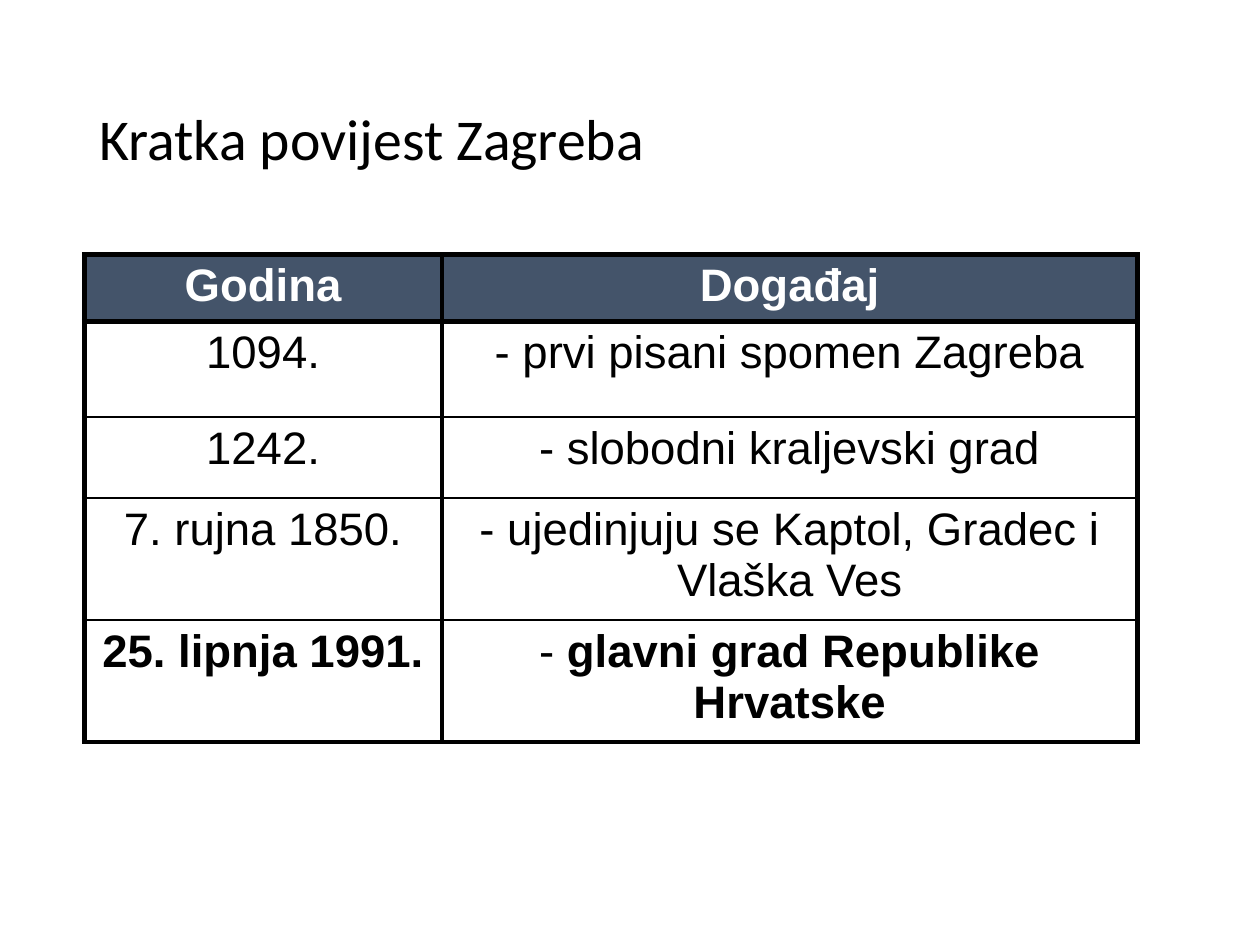
"""Build a slide with a short history of Zagreb as a two-column table."""
from dataclasses import dataclass

from lxml import etree
from pptx import Presentation
from pptx.dml.color import RGBColor
from pptx.enum.text import MSO_ANCHOR, PP_ALIGN
from pptx.oxml.ns import qn
from pptx.util import Cm, Pt

LEFT, CENTER = PP_ALIGN.LEFT, PP_ALIGN.CENTER
TOP, MIDDLE = MSO_ANCHOR.TOP, MSO_ANCHOR.MIDDLE
COLORS = {"ink": "000000", "header": "44546A", "header_text": "FFFFFF"}
COL_WIDTHS = (7.21, 14.02)
THICK, THIN = 3, 1


@dataclass
class Row:
    year: str
    event: str
    height: float
    bold: bool = False
    prefix: str = ""


ROWS = [
    Row("Godina", "Događaj", 1.35, bold=True),
    Row("1094.", "- prvi pisani spomen Zagreba", 1.93),
    Row("1242.", "- slobodni kraljevski grad", 1.63),
    Row("7. rujna 1850.", "- ujedinjuju se Kaptol, Gradec i Vlaška Ves", 2.46),
    Row("25. lipnja 1991.", "glavni grad Republike Hrvatske", 2.46, bold=True, prefix="- "),
]


def write(tf, text: str, *, prefix: str = "", font: str = "Arial", size: float = 26,
          color: str = "ink", bold: bool = False, align=CENTER):
    """Write one paragraph, with an optional regular-weight prefix, and return it."""
    p = tf.paragraphs[0]
    p.alignment = align
    for part, weight in ((prefix, False), (text, bold)):
        if part:
            r = p.add_run()
            r.text = part
            r.font.name, r.font.size, r.font.bold = font, Pt(size), weight
            r.font.color.rgb = RGBColor.from_string(COLORS[color])
    return p


def set_borders(cell, top: float, bottom: float) -> None:
    """Give a cell thick sides and the chosen top and bottom lines."""
    tcPr = cell._tc.get_or_add_tcPr()
    widths = {"a:lnL": THICK, "a:lnR": THICK, "a:lnT": top, "a:lnB": bottom}
    for i, (tag, width) in enumerate(widths.items()):
        ln = etree.Element(qn(tag), w=str(Pt(width)))
        fill = etree.SubElement(ln, qn("a:solidFill"))
        etree.SubElement(fill, qn("a:srgbClr"), val=COLORS["ink"])
        tcPr.insert(i, ln)


def set_space_before(p, percent: int) -> None:
    """Set the space before a paragraph as a percentage of its line."""
    spacing = etree.Element(qn("a:spcBef"))
    etree.SubElement(spacing, qn("a:spcPct"), val=str(percent * 1000))
    p._p.get_or_add_pPr().insert(0, spacing)


def add_title(s, text: str) -> None:
    """Place and format the title placeholder."""
    sp = s.shapes.title
    sp.left, sp.top, sp.width, sp.height = Cm(1.75), Cm(1.02), Cm(21.89), Cm(3.68)
    tf = sp.text_frame
    tf.vertical_anchor = MIDDLE
    write(tf, text, font="Calibri", size=33, align=LEFT).line_spacing = 0.9


def add_history(s, rows: list[Row]) -> None:
    """Draw the table of years and events."""
    table = s.shapes.add_table(
        len(rows), len(COL_WIDTHS), Cm(1.7), Cm(5.13),
        Cm(sum(COL_WIDTHS)), Cm(sum(row.height for row in rows))).table
    table.horz_banding = False
    for col, width in zip(table.columns, COL_WIDTHS):
        col.width = Cm(width)
    for i, row in enumerate(rows):
        header = i == 0
        table.rows[i].height = Cm(row.height)
        for j, (text, prefix) in enumerate(((row.year, ""), (row.event, row.prefix))):
            cell = table.cell(i, j)
            cell.vertical_anchor = TOP
            if header:
                cell.fill.solid()
                cell.fill.fore_color.rgb = RGBColor.from_string(COLORS["header"])
            else:
                cell.fill.background()
            p = write(cell.text_frame, text, prefix=prefix, bold=row.bold,
                      color="header_text" if header else "ink")
            set_space_before(p, 20)
            set_borders(cell, top=THICK if i <= 1 else THIN,
                        bottom=THICK if i in (0, len(rows) - 1) else THIN)


def main() -> None:
    """Build and save the slide."""
    prs = Presentation()
    prs.slide_width, prs.slide_height = Cm(25.4), Cm(19.05)
    s = prs.slides.add_slide(prs.slide_layouts[5])
    add_title(s, "Kratka povijest Zagreba")
    add_history(s, ROWS)
    prs.save("out.pptx")


if __name__ == "__main__":
    main()
